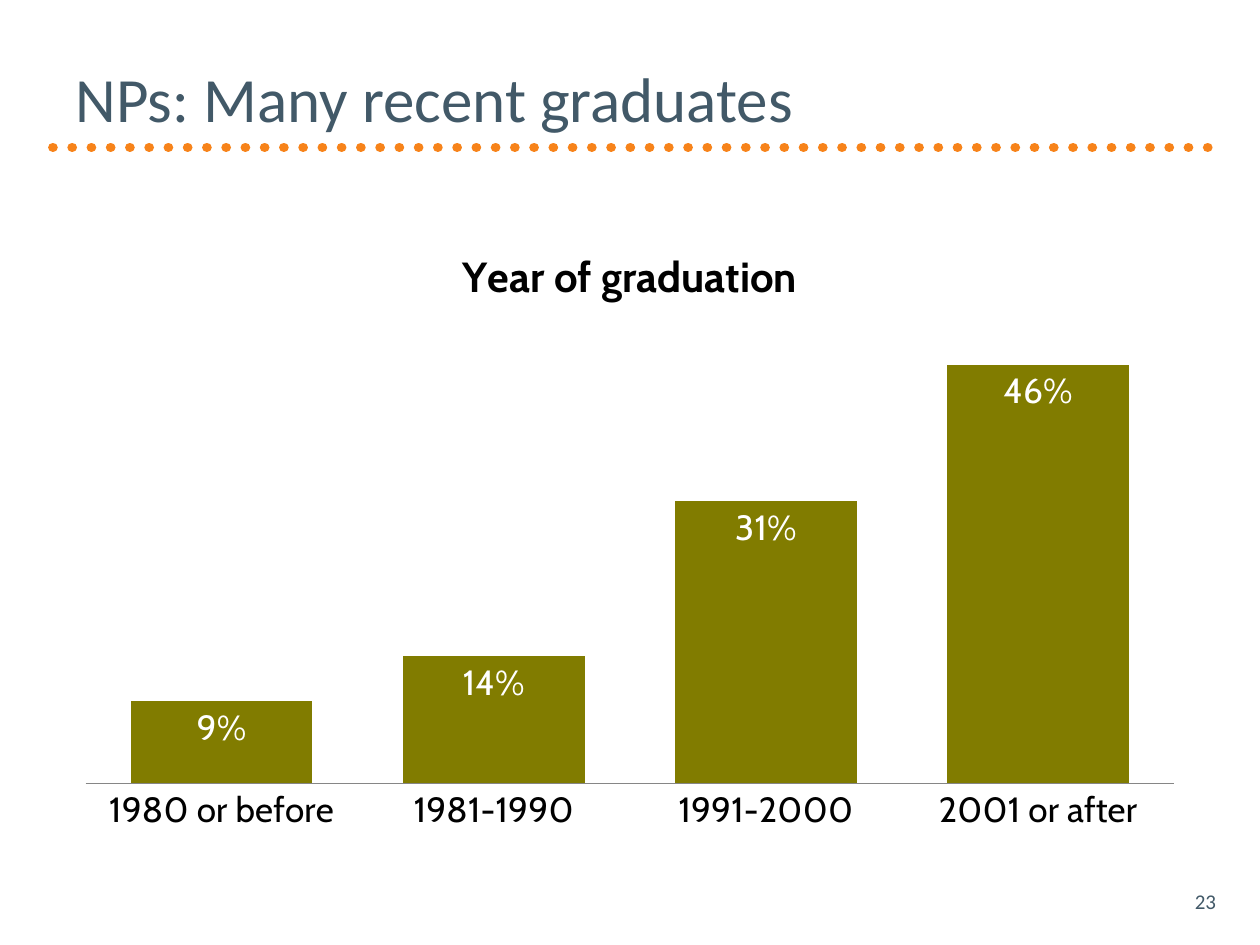
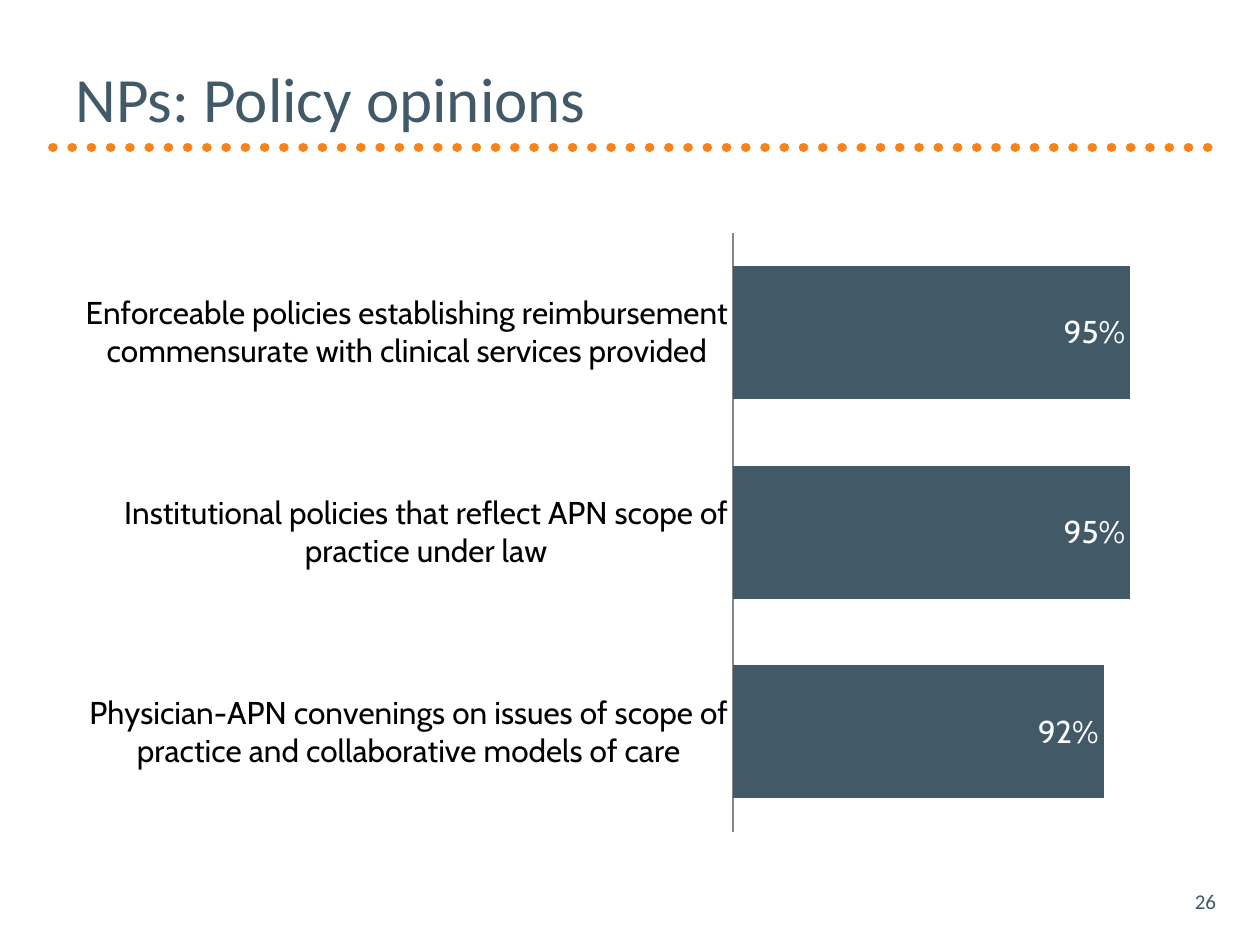
"""Build two slides that chart nurse practitioner survey results."""
from dataclasses import dataclass
from typing import Optional

from lxml import etree
from pptx import Presentation
from pptx import slide as slides
from pptx import util as u
from pptx.chart import chart as charts
from pptx.chart import data
from pptx.dml.color import RGBColor
from pptx.enum import chart as kinds
from pptx.enum import dml, shapes, text
from pptx.oxml import ns
from pptx.text import text as texts

EMU_PER_PX = 9144
TITLE_ONLY = 5


@dataclass(frozen=True)
class Theme:
    """Colours, fonts and type sizes of the deck."""

    slate: str = "425968"
    orange: str = "F7831A"
    olive: str = "817C00"
    grey: str = "868686"
    black: str = "000000"
    white: str = "FFFFFF"
    heading_font: str = "Calibri"
    chart_font: str = "Cabin"
    title_size: int = 36
    number_size: int = 12
    chart_title_size: int = 24


@dataclass(frozen=True)
class Area:
    """A rectangle in px."""

    left: int
    top: int
    width: int
    height: int

    def emu(self) -> tuple[u.Emu, ...]:
        """Return left, top, width and height in EMU."""
        return tuple(px(side) for side in (self.left, self.top, self.width, self.height))


@dataclass(frozen=True)
class BarChart:
    """Values and looks of one bar chart."""

    kind: kinds.XL_CHART_TYPE
    values: dict[str, float]
    number_format: str
    color: str
    size: int
    minimum: float
    maximum: float
    title: Optional[str] = None
    overlap: int = 0
    reverse: bool = False


@dataclass(frozen=True)
class ChartPage:
    """Title, number and chart of one slide."""

    title: str
    number: int
    chart: BarChart


THEME = Theme()
TITLE_AREA = Area(50, 30, 900, 95)
CHART_AREA = Area(50, 175, 900, 495)
NUMBER_AREA = Area(742, 695, 233, 40)
RULE = Area(42, 117, 925, 0)

PAGES = (
    ChartPage(
        "NPs: Many recent graduates",
        23,
        BarChart(
            kind=kinds.XL_CHART_TYPE.COLUMN_CLUSTERED,
            values={
                "1980 or before": 9,
                "1981-1990": 14,
                "1991-2000": 31,
                "2001 or after": 46,
            },
            number_format='0"%"',
            color=THEME.olive,
            size=20,
            minimum=0,
            maximum=50,
            title="Year of graduation",
        ),
    ),
    ChartPage(
        "NPs: Policy opinions",
        26,
        BarChart(
            kind=kinds.XL_CHART_TYPE.BAR_CLUSTERED,
            values={
                "Enforceable policies establishing reimbursement "
                "commensurate with clinical services provided": 0.95,
                "Institutional policies that reflect APN scope of practice under law": 0.95,
                "Physician-APN convenings on issues of scope of practice "
                "and collaborative models of care": 0.92,
            },
            number_format="0%",
            color=THEME.slate,
            size=18,
            minimum=0.5,
            maximum=1,
            overlap=-25,
            reverse=True,
        ),
    ),
)


def px(length: int) -> u.Emu:
    """Turn px into EMU."""
    return u.Emu(length * EMU_PER_PX)


def style_font(font: texts.Font, name: str, size: int, color: str) -> None:
    """Set the face, size and colour of a font."""
    font.name = name
    font.size = u.Pt(size)
    font.color.rgb = RGBColor.from_string(color)


def write(frame: texts.TextFrame, words: str, size: int, align: text.PP_ALIGN) -> None:
    """Fill a text frame with one heading-style paragraph."""
    frame.text = words
    frame.word_wrap = True
    frame.vertical_anchor = text.MSO_ANCHOR.MIDDLE
    paragraph = frame.paragraphs[0]
    paragraph.alignment = align
    style_font(paragraph.runs[0].font, THEME.heading_font, size, THEME.slate)


def add_rule(page: slides.Slide) -> None:
    """Draw the dotted line below the title."""
    left, top, width, height = RULE.emu()
    rule = page.shapes.add_connector(
        shapes.MSO_CONNECTOR.STRAIGHT, left, top, left + width, top + height
    )
    rule.line.color.rgb = RGBColor.from_string(THEME.orange)
    rule.line.width = u.Pt(5.5)
    rule.line.dash_style = dml.MSO_LINE.ROUND_DOT
    properties = rule._element.spPr
    properties.find(ns.qn("a:ln")).set("cap", "rnd")
    etree.SubElement(properties, ns.qn("a:effectLst"))


def add_title(page: slides.Slide, words: str) -> None:
    """Place and fill the title placeholder."""
    title = page.shapes.title
    title.left, title.top, title.width, title.height = TITLE_AREA.emu()
    write(title.text_frame, words, THEME.title_size, text.PP_ALIGN.LEFT)


def add_number(page: slides.Slide, number: int) -> None:
    """Write the slide number at the bottom right."""
    box = page.shapes.add_textbox(*NUMBER_AREA.emu())
    write(box.text_frame, str(number), THEME.number_size, text.PP_ALIGN.RIGHT)


def style_axes(chart: charts.Chart, bars: BarChart) -> None:
    """Hide the value axis and leave a plain category line."""
    values = chart.value_axis
    values.minimum_scale = bars.minimum
    values.maximum_scale = bars.maximum
    values.has_major_gridlines = False
    values.visible = False
    categories = chart.category_axis
    categories.reverse_order = bars.reverse
    categories.has_major_gridlines = False
    categories.major_tick_mark = kinds.XL_TICK_MARK.NONE
    categories.format.line.color.rgb = RGBColor.from_string(THEME.grey)
    categories.format.line.width = u.Pt(0.75)


def style_bars(chart: charts.Chart, bars: BarChart) -> None:
    """Colour the bars and label their inner ends."""
    plot = chart.plots[0]
    plot.gap_width = 50
    plot.overlap = bars.overlap
    plot.vary_by_categories = False
    series = plot.series[0]
    series.format.fill.solid()
    series.format.fill.fore_color.rgb = RGBColor.from_string(bars.color)
    labels = series.data_labels
    labels.show_value = True
    labels.number_format = bars.number_format
    labels.number_format_is_linked = False
    labels.position = kinds.XL_LABEL_POSITION.INSIDE_END
    style_font(labels.font, THEME.chart_font, bars.size, THEME.white)


def add_chart(page: slides.Slide, bars: BarChart) -> None:
    """Add a bar chart with one series."""
    source = data.CategoryChartData(number_format=bars.number_format)
    source.categories = list(bars.values)
    source.add_series("Series 1", list(bars.values.values()))
    chart = page.shapes.add_chart(bars.kind, *CHART_AREA.emu(), source).chart
    chart.has_legend = False
    style_font(chart.font, THEME.chart_font, bars.size, THEME.black)
    chart.has_title = bars.title is not None
    if bars.title:
        frame = chart.chart_title.text_frame
        frame.text = bars.title
        font = frame.paragraphs[0].runs[0].font
        style_font(font, THEME.chart_font, THEME.chart_title_size, THEME.black)
        font.bold = True
        chart.chart_title.include_in_layout = False
    style_axes(chart, bars)
    style_bars(chart, bars)


def main() -> None:
    """Build and save the deck."""
    deck = Presentation()
    deck.slide_width, deck.slide_height = px(1000), px(750)
    for content in PAGES:
        page = deck.slides.add_slide(deck.slide_layouts[TITLE_ONLY])
        add_rule(page)
        add_title(page, content.title)
        add_chart(page, content.chart)
        add_number(page, content.number)
    deck.save("out.pptx")


if __name__ == "__main__":
    main()
